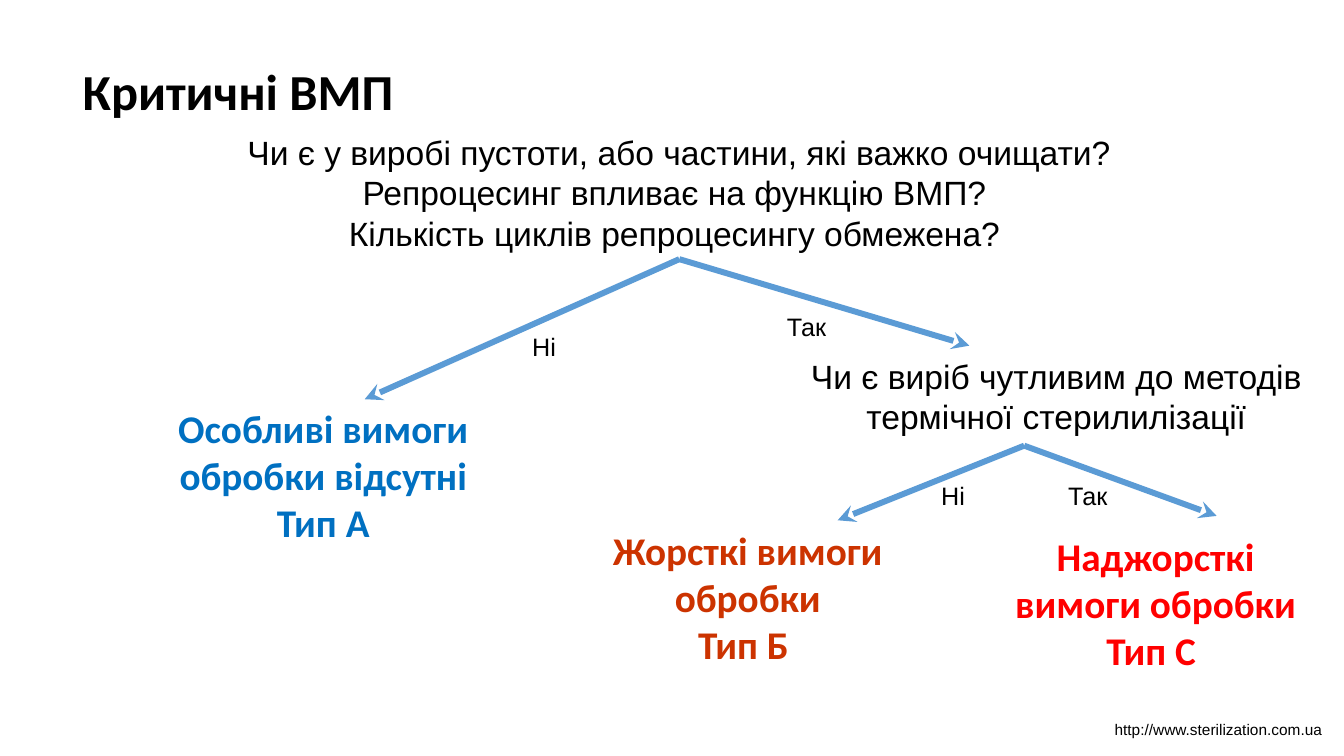
"""Build a decision tree slide for processing critical medical devices."""
from lxml import etree
from pptx import Presentation
from pptx.dml import color
from pptx.enum import shapes, text
from pptx.oxml import ns
from pptx.util import Cm, Pt

COLORS = {
    "ink": "000000",
    "arrow": "5B9BD5",
    "type_a": "0070C1",
    "type_b": "CC3300",
    "type_c": "FF0000",
}


def rgb(name):
    """Return the named colour."""
    return color.RGBColor.from_string(COLORS[name])


def fill_text(frame, words, size, font="Arial", ink="ink", bold=False, align="LEFT"):
    """Write the words into a text frame and format every run."""
    frame.text = words
    for para in frame.paragraphs:
        para.alignment = getattr(text.PP_ALIGN, align)
        for span in para.runs:
            span.font.name = font
            span.font.size = Pt(size)
            span.font.bold = bold
            span.font.color.rgb = rgb(ink)


def add_title(page, box, words):
    """Place and format the title placeholder."""
    title = page.shapes.title
    title.left, title.top, title.width, title.height = map(Cm, box)
    fill_text(title.text_frame, words, 36, "Calibri", bold=True)
    title.text_frame.auto_size = text.MSO_AUTO_SIZE.NONE
    title.text_frame.vertical_anchor = text.MSO_ANCHOR.MIDDLE


def add_text(page, box, words, size, wrap=True, **style):
    """Add a text box that grows with its text."""
    frame = page.shapes.add_textbox(*map(Cm, box)).text_frame
    frame.word_wrap = wrap
    frame.auto_size = text.MSO_AUTO_SIZE.SHAPE_TO_FIT_TEXT
    fill_text(frame, words, size, **style)


def add_question(page, box, words):
    """Add a centred question."""
    add_text(page, box, words, 24, align="CENTER")


def add_outcome(page, box, words, ink):
    """Add a bold coloured outcome."""
    add_text(page, box, words, 28, font="Calibri", ink=ink, bold=True, align="CENTER")


def add_arrow(page, start, end):
    """Draw a flat arrow between two points."""
    arrow = page.shapes.add_connector(
        shapes.MSO_CONNECTOR.STRAIGHT, *map(Cm, start + end))
    arrow.line.color.rgb = rgb("arrow")
    arrow.line.width = Pt(4.25)
    etree.SubElement(arrow.line._get_or_add_ln(), ns.qn("a:tailEnd"), type="stealth")
    etree.SubElement(arrow._element.spPr, ns.qn("a:effectLst"))


def add_fork(page, box, apex, right_drop, no_at, yes_at):
    """Draw two labelled branches from the apex on the top edge of the box."""
    left, top, width, height = box
    start = (left + apex, top)
    add_arrow(page, start, (left, top + height))
    add_arrow(page, start, (left + width, top + right_drop))
    for words, (across, down), label_width in (("Ні", no_at, 1.12), ("Так", yes_at, 1.52)):
        add_text(page, (left + across, top + down, label_width, 1.02), words, 18, wrap=False)


def build_slide(deck):
    """Fill one slide with the decision tree."""
    page = deck.slides.add_slide(deck.slide_layouts.get_by_name("Title Only"))
    add_title(page, (1.83, 0.46, 25.68, 3.63), "Критичні ВМП")
    add_question(page, (4.39, 3.2, 25.45, 3.33),
                 "Чи є у виробі пустоти, або частини, які важко очищати?\n"
                 "Репроцесинг впливає на функцію ВМП? \n"
                 "Кількість циклів репроцесингу обмежена? ")
    add_fork(page, (9.19, 6.53, 15.24, 3.53), 7.93, 2.18, (3.97, 1.7), (10.39, 1.19))
    add_outcome(page, (2.57, 10.06, 11.15, 3.84),
                "Особливі вимоги\nобробки відсутні\nТип А", "type_a")
    add_question(page, (20.09, 8.84, 13.06, 2.31),
                 "Чи є виріб чутливим до методів термічної стерилилізації")
    add_fork(page, (21.11, 11.23, 9.55, 1.88), 4.7, 1.77, (2.36, 0.76), (5.56, 0.76))
    add_outcome(page, (14.25, 13.13, 9.19, 3.84),
                "Жорсткі вимоги обробки\nТип Б ", "type_b")
    add_outcome(page, (24.74, 13.28, 8.76, 3.84),
                "Наджорсткі вимоги обробки\nТип С ", "type_c")
    add_text(page, (27.84, 18.03, 5.79, 0.74),
             "http://www.sterilization.com.ua", 11, wrap=False)


def main():
    """Create and save the deck."""
    deck = Presentation()
    deck.slide_width, deck.slide_height = Cm(33.87), Cm(19.05)
    build_slide(deck)
    deck.save("out.pptx")


if __name__ == "__main__":
    main()
